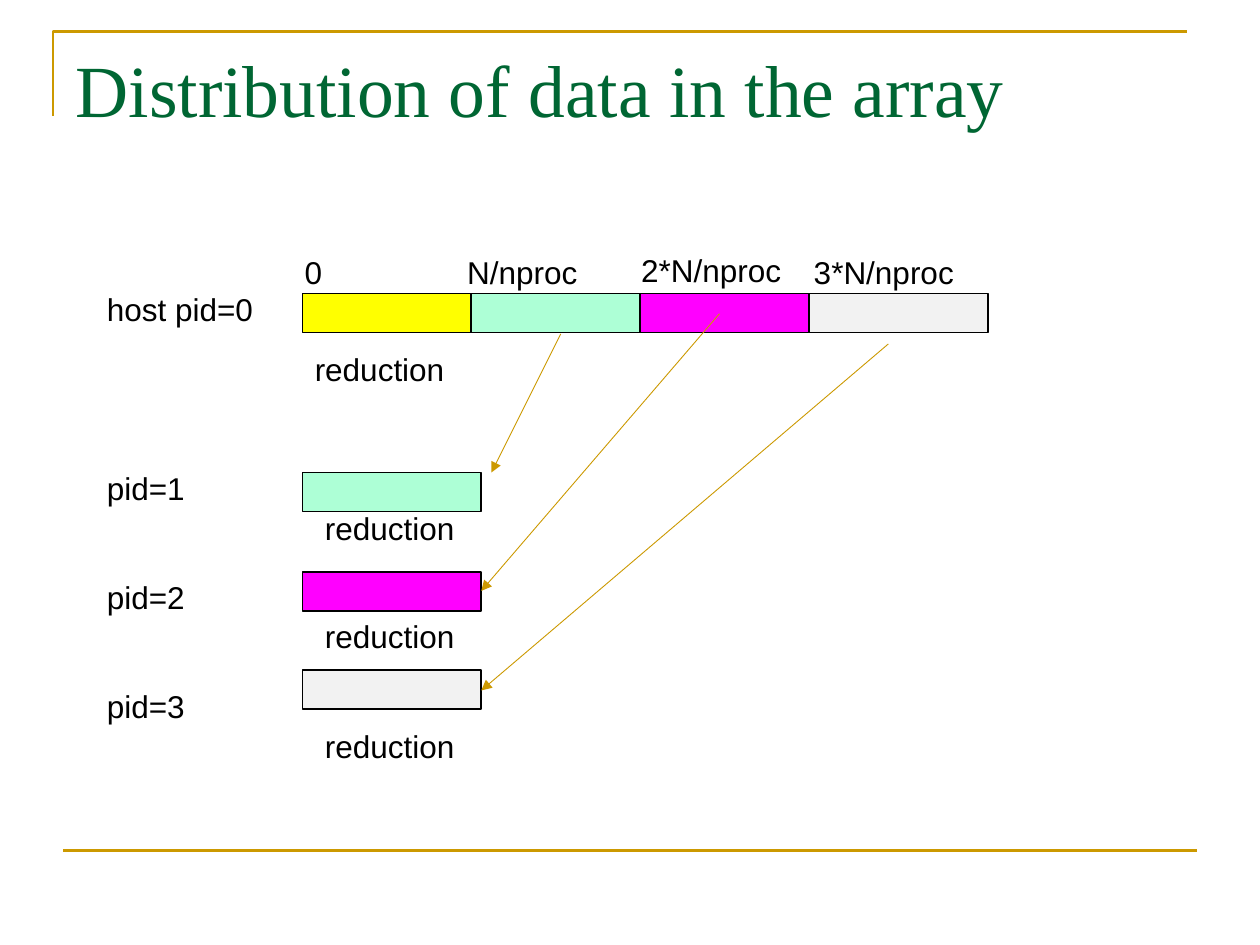
from lxml import etree
from pptx import Presentation
from pptx.dml.color import RGBColor
from pptx.enum.shapes import MSO_CONNECTOR, MSO_SHAPE
from pptx.enum.text import MSO_ANCHOR, MSO_AUTO_SIZE, PP_ALIGN
from pptx.oxml.ns import qn
from pptx.util import Inches, Pt

STRAIGHT = MSO_CONNECTOR.STRAIGHT
RECTANGLE = MSO_SHAPE.RECTANGLE
TOP = MSO_ANCHOR.TOP
FIT_SHAPE = MSO_AUTO_SIZE.SHAPE_TO_FIT_TEXT
NO_FIT = MSO_AUTO_SIZE.NONE
LEFT = PP_ALIGN.LEFT

GOLD = RGBColor(0xCC, 0x99, 0x00)
GREEN = RGBColor(0x00, 0x66, 0x33)
BLACK = RGBColor(0x00, 0x00, 0x00)
YELLOW = RGBColor(0xFF, 0xFF, 0x00)
MINT = RGBColor(0xAD, 0xFF, 0xD6)
MAGENTA = RGBColor(0xFF, 0x00, 0xFF)
GRAY = RGBColor(0xF2, 0xF2, 0xF2)

ARRAY_LEFT, ARRAY_TOP = 2.4, 2.33
BLOCK_WIDTH, BLOCK_HEIGHT, BLOCK_STEP = 1.42, 0.31, 1.34
LABEL_LEFT, LABEL_HEIGHT = 0.75, 0.4


def add_span(para, text, font, size, color):
    span = para.add_run()
    span.text = text
    span.font.name = font
    span.font.size = Pt(size)
    span.font.color.rgb = color


def add_title(page, text):
    title = page.shapes.title
    title.left, title.top = Inches(0.5), Inches(0.3)
    title.width, title.height = Inches(9), Inches(1.25)
    frame = title.text_frame
    frame.word_wrap = True
    frame.auto_size = NO_FIT
    frame.vertical_anchor = TOP
    para = frame.paragraphs[0]
    para.alignment = LEFT
    add_span(para, text, "Times New Roman", 42, GREEN)


def add_label(page, text, left, top, width):
    box = page.shapes.add_textbox(
        Inches(left), Inches(top), Inches(width), Inches(LABEL_HEIGHT))
    frame = box.text_frame
    frame.word_wrap = False
    frame.auto_size = FIT_SHAPE
    add_span(frame.paragraphs[0], text, "Arial", 18, BLACK)


def add_block(page, left, top, color):
    block = page.shapes.add_shape(
        RECTANGLE, Inches(left), Inches(top), Inches(BLOCK_WIDTH), Inches(BLOCK_HEIGHT))
    block.shadow.inherit = False
    block.fill.solid()
    block.fill.fore_color.rgb = color
    block.line.color.rgb = BLACK
    block.line.width = Pt(1)


def add_line(page, start, end, weight, arrow=False):
    line = page.shapes.add_connector(STRAIGHT, *map(Inches, start + end))
    line.line.color.rgb = GOLD
    line.line.width = Pt(weight)
    if arrow:
        etree.SubElement(line.line._get_or_add_ln(), qn("a:tailEnd"), type="triangle")
    etree.SubElement(line._element.spPr, qn("a:effectLst"))


def add_corner(page):
    builder = page.shapes.build_freeform(Inches(0.42), Inches(0.92))
    builder.add_line_segments(
        [(Inches(0.42), Inches(0.25)), (Inches(9.42), Inches(0.25))], close=False)
    corner = builder.convert_to_shape()
    corner.shadow.inherit = False
    corner.fill.background()
    corner.line.color.rgb = GOLD
    corner.line.width = Pt(1.5)


def add_host(page):
    offsets = [("0", 2.32, 1.96, 0.34), ("N/nproc", 3.61, 1.96, 1.09),
               ("2*N/nproc", 4.99, 1.94, 1.32), ("3*N/nproc", 6.36, 1.96, 1.32)]
    for index, color in enumerate([YELLOW, MINT, MAGENTA, GRAY]):
        add_block(page, ARRAY_LEFT + index * BLOCK_STEP, ARRAY_TOP, color)
    for offset in offsets:
        add_label(page, *offset)
    add_label(page, "host pid=0", LABEL_LEFT, 2.25, 1.37)
    add_label(page, "reduction", ARRAY_LEFT, 2.73, 1.24)


def add_process(page, name, color, block_top, name_top, reduction_top):
    add_block(page, ARRAY_LEFT, block_top, color)
    add_label(page, name, LABEL_LEFT, name_top, 0.83)
    add_label(page, "reduction", 2.48, reduction_top, 1.24)


def main():
    deck = Presentation()
    deck.slide_width, deck.slide_height = Inches(10), Inches(7.5)
    page = deck.slides.add_slide(deck.slide_layouts[5])
    add_corner(page)
    add_line(page, (0.5, 6.75), (9.5, 6.75), 1.5)
    add_title(page, "Distribution of data in the array")
    add_host(page)
    add_process(page, "pid=1", MINT, 3.75, 3.67, 3.99)
    add_process(page, "pid=2", MAGENTA, 4.54, 4.54, 4.85)
    add_process(page, "pid=3", GRAY, 5.32, 5.4, 5.72)
    for start, end in [((4.45, 2.65), (3.9, 3.75)),
                       ((7.05, 2.73), (3.82, 5.48)),
                       ((5.71, 2.49), (3.82, 4.69))]:
        add_line(page, start, end, 0.5, arrow=True)
    deck.save("out.pptx")


if __name__ == "__main__":
    main()
